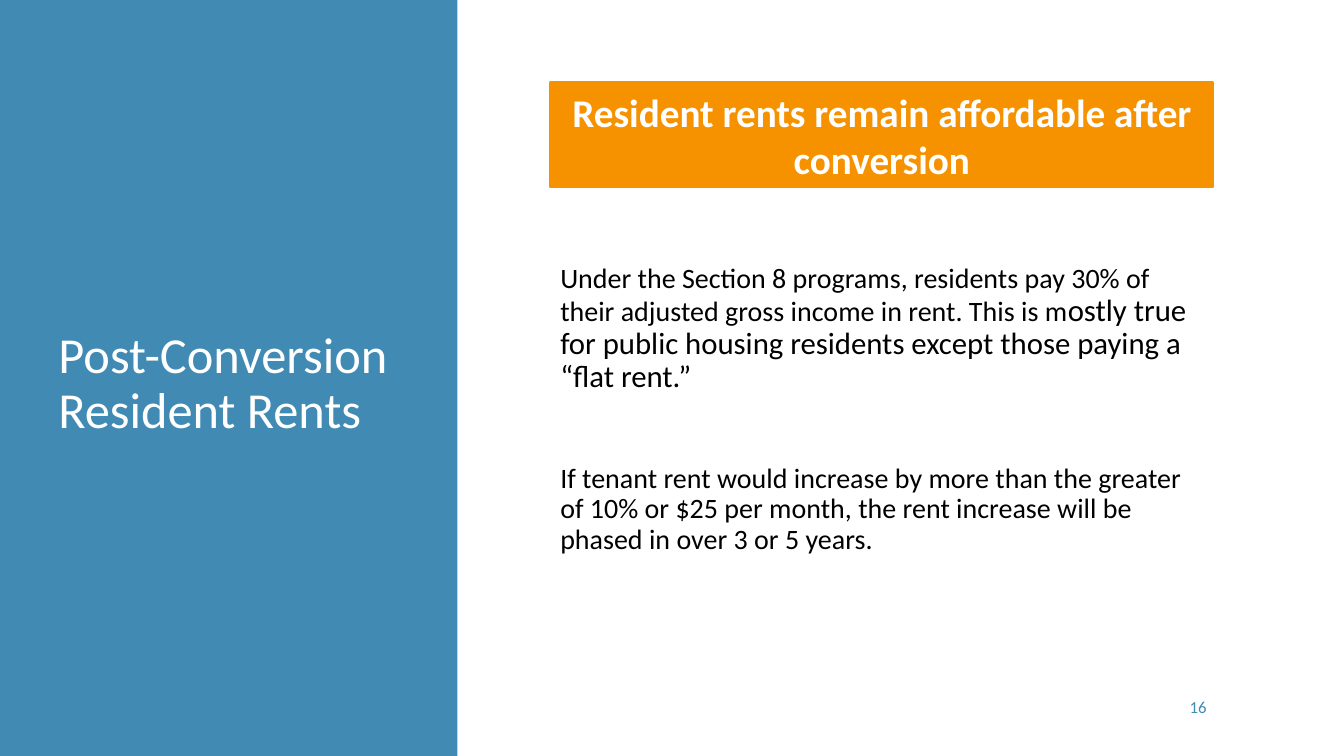
from pptx import Presentation
from pptx import util as u
from pptx.dml.color import RGBColor
from pptx.enum import shapes, text

COLORS = {"white": "FFFFFF", "blue": "418AB3", "orange": "F69200", "black": "000000"}
HUES = {name: RGBColor.from_string(code) for name, code in COLORS.items()}
ALIGN, ANCHOR = text.PP_ALIGN, text.MSO_ANCHOR


def block(left, top, width, height, hue):
    """Add a plain filled rectangle with a line of the same colour."""
    rect = slide.shapes.add_shape(
        shapes.MSO_SHAPE.RECTANGLE, u.Cm(left), u.Cm(top), u.Cm(width), u.Cm(height))
    rect.shadow.inherit = False
    rect.fill.solid()
    rect.fill.fore_color.rgb = rect.line.color.rgb = HUES[hue]
    rect.line.width = u.Pt(1.5)
    return rect


def write(shape, paras, hue, align=ALIGN.LEFT, bold=False, **form):
    """Fill a shape with paragraphs, each a list of (words, size) runs."""
    frame = shape.text_frame
    frame.word_wrap = True
    frame.auto_size = text.MSO_AUTO_SIZE.NONE
    frame.vertical_anchor = ANCHOR.MIDDLE
    for i, runs in enumerate(paras):
        para = frame.add_paragraph() if i else frame.paragraphs[0]
        para.alignment = align
        for key, value in form.items():
            setattr(para, key, value)
        for words, size in runs:
            run = para.add_run()
            run.text = words
            look = {"name": "Calibri", "size": u.Pt(size), "bold": bold}
            for key, value in look.items():
                setattr(run.font, key, value)
            run.font.color.rgb = HUES[hue]
    return frame


deck = Presentation()
deck.slide_width, deck.slide_height = u.Cm(33.87), u.Cm(19.05)
slide = deck.slides.add_slide(deck.slide_layouts[5])
slide.background.fill.solid()
slide.background.fill.fore_color.rgb = HUES["white"]

# Blue side panel, behind the title
panel = block(0, 0, 11.53, 19.05, "blue")
panel.line.fill.background()
title = slide.shapes.title
title.element.addprevious(panel.element)
place = {"left": 1.22, "top": 2.44, "width": 9.09, "height": 14.5}
for key, value in place.items():
    setattr(title, key, u.Cm(value))
write(title, [[("Post-Conversion Resident Rents", 36)]], "white", line_spacing=0.9)

# Body text, set a little below the middle
body = slide.shapes.add_textbox(u.Cm(13.87), u.Cm(2.44), u.Cm(16.71), u.Cm(14.5))
rents = [
    [("Under the Section 8 programs, residents pay 30% of their adjusted gross "
      "income in rent. This is m", 20),
     ("ostly true for public housing residents except those paying a “flat rent.”", 22)],
    [("If tenant rent would increase by more than the greater of 10% or $25 per month, "
      "the rent increase will be phased in over 3 or 5 years.", 20)],
]
frame = write(body, rents, "black", line_spacing=0.9)
frame.margin_top = u.Cm(1.4)
frame.paragraphs[1].space_before = u.Pt(50)

# Page number
page = slide.shapes.add_textbox(u.Cm(27.69), u.Cm(17.3), u.Cm(2.97), u.Cm(1.02))
write(page, [[("16", 12)]], "blue", ALIGN.RIGHT, space_after=u.Pt(6))

# Orange headline
banner = block(13.87, 2.08, 16.71, 2.64, "orange")
write(banner, [[("Resident rents remain affordable after conversion", 28)]],
      "white", ALIGN.CENTER, bold=True)

deck.save("out.pptx")
